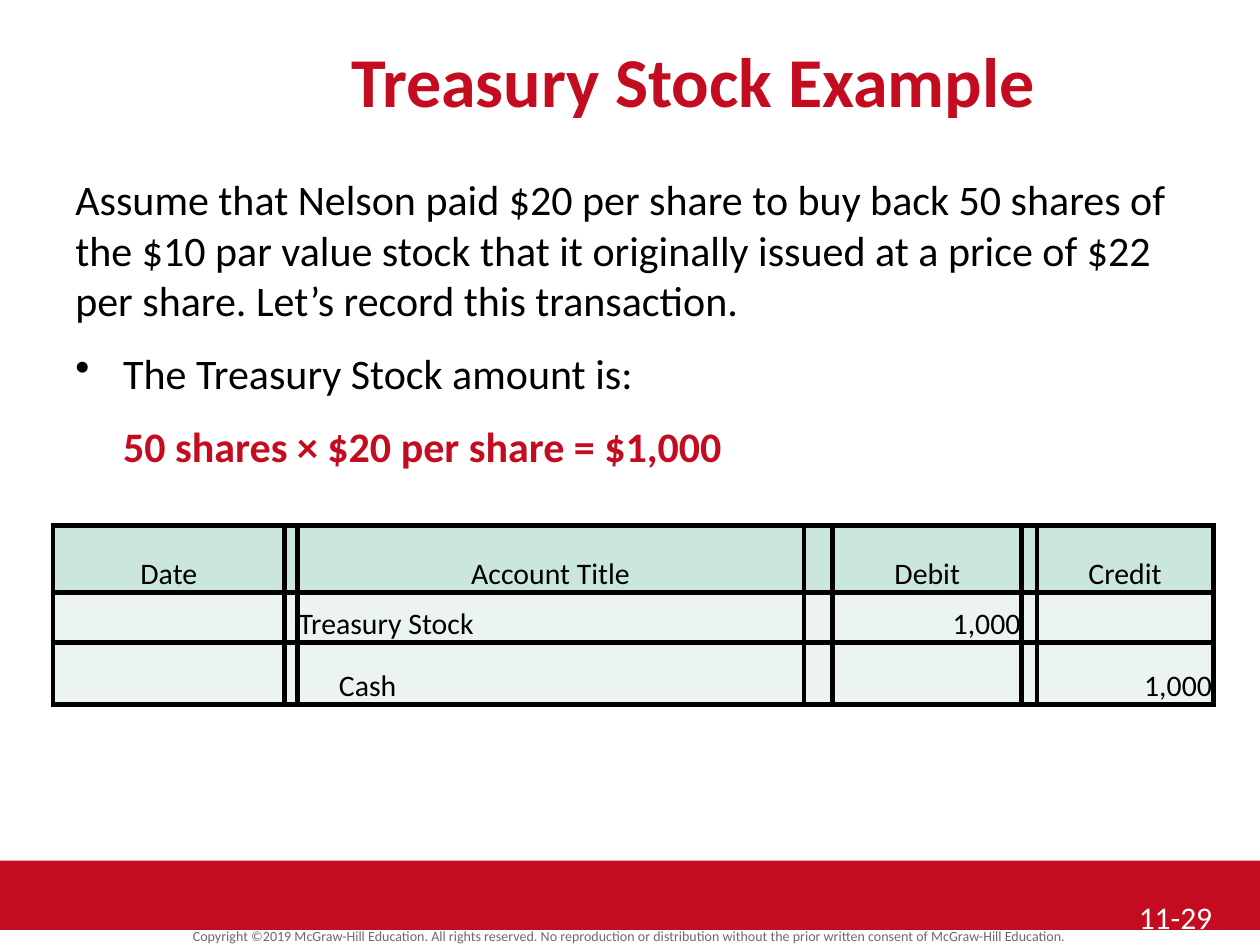
from lxml import etree
from pptx import Presentation
from pptx import util as u
from pptx.dml.color import RGBColor
from pptx.enum import shapes, text
from pptx.oxml.ns import qn

THEME = {
    "font": "Calibri",
    "red": "C30C20", "black": "000000", "white": "FFFFFF", "grey": "6A6A6A",
    "header": "CAE6DE", "row": "ECF4F1",
    "title": 40, "body": 24, "number": 18, "table": 17, "small": 8,
}
LEFT, CENTER, RIGHT = text.PP_ALIGN.LEFT, text.PP_ALIGN.CENTER, text.PP_ALIGN.RIGHT

# Content
TITLE = "Treasury Stock Example"
BODY = [
    ("Assume that Nelson paid $20 per share to buy back 50 shares of the $10 par value "
     "stock that it originally issued at a price of $22 per share. "
     "Let’s record this transaction.", {}),
    ("The Treasury Stock amount is:", {"indent": 0.38, "bullet": "•", "before": 4.8}),
    ("50 shares × $20 per share = $1,000",
     {"indent": 0.38, "before": 4.8, "color": "red", "bold": True}),
]
COPYRIGHT = ("Copyright ©2019 McGraw-Hill Education. All rights reserved. No reproduction or "
             "distribution without the prior written consent of McGraw-Hill Education.")
PAGE_NUMBER = "11-29"

COLUMN_WIDTHS = [1.84, 0.1, 4.02, 0.23, 1.5, 0.12, 1.4]
ROW_HEIGHTS = [0.53, 0.4, 0.49]
JOURNAL = [  # narrow empty columns separate the four fields
    ["Date", "", "Account Title", "", "Debit", "", "Credit"],
    ["", "", "Treasury Stock", "", "1,000", "", ""],
    ["", "", "Cash", "", "", "", "1,000"],
]
CREDIT_INDENT = 0.32


def write(para, words, size="body", color="black", bold=False, align=LEFT,
          indent=0, bullet=None, before=0, after=0, spacing=None):
    """Put words in a paragraph with the given format."""
    props = para._p.get_or_add_pPr()
    props.set("marL", str(u.Inches(indent)))
    props.set("indent", str(-u.Inches(indent) if bullet else 0))
    if bullet:
        etree.SubElement(props, qn("a:buChar"), char=bullet)
    para.alignment = align
    para.space_before, para.space_after = u.Pt(before), u.Pt(after)
    if spacing:
        para.line_spacing = spacing
    font = para.font
    if words:
        span = para.add_run()
        span.text = words
        font = span.font
    font.name, font.size, font.bold = THEME["font"], u.Pt(THEME[size]), bold
    font.color.rgb = RGBColor.from_string(THEME[color])


def add_text(page, place, paragraphs, **style):
    """Add a wrapped text box holding (words, format) paragraphs."""
    box = page.shapes.add_textbox(*map(u.Inches, place))
    frame = box.text_frame
    frame.word_wrap = True
    for i, (words, extra) in enumerate(paragraphs):
        para = frame.add_paragraph() if i else frame.paragraphs[0]
        write(para, words, **{**style, **extra})


def add_borders(cell, color, points):
    props = cell._tc.get_or_add_tcPr()
    for i, side in enumerate(("a:lnL", "a:lnR", "a:lnT", "a:lnB")):
        line = etree.Element(qn(side), w=str(u.Pt(points)))
        fill = etree.SubElement(line, qn("a:solidFill"))
        etree.SubElement(fill, qn("a:srgbClr"), val=color)
        props.insert(i, line)


def add_journal(page, left, top):
    frame = page.shapes.add_table(
        len(ROW_HEIGHTS), len(COLUMN_WIDTHS), u.Inches(left), u.Inches(top),
        u.Inches(sum(COLUMN_WIDTHS)), u.Inches(sum(ROW_HEIGHTS)))
    table = frame.table
    table.first_row = table.horz_banding = False
    for column, width in zip(table.columns, COLUMN_WIDTHS):
        column.width = u.Inches(width)
    for r, (height, entries) in enumerate(zip(ROW_HEIGHTS, JOURNAL)):
        table.rows[r].height = u.Inches(height)
        for c, words in enumerate(entries):
            cell = table.cell(r, c)
            cell.margin_left = cell.margin_right = cell.margin_top = u.Inches(0.01)
            cell.margin_bottom = 0
            cell.vertical_anchor = text.MSO_ANCHOR.BOTTOM
            cell.fill.solid()
            cell.fill.fore_color.rgb = RGBColor.from_string(THEME["row" if r else "header"])
            add_borders(cell, THEME["black"], 3)
            align = CENTER if r == 0 else RIGHT if c > 2 else LEFT
            write(cell.text_frame.paragraphs[0], words, size="table", align=align,
                  indent=CREDIT_INDENT if words == "Cash" else 0)


def main():
    deck = Presentation()
    deck.slide_width, deck.slide_height = u.Inches(10), u.Inches(7.5)
    page = deck.slides.add_slide(deck.slide_layouts[6])

    # Footer band and copyright line
    band = page.shapes.add_shape(shapes.MSO_SHAPE.RECTANGLE,
                                 *map(u.Inches, (0, 6.83, 10, 0.55)))
    band.shadow.inherit = False
    band.fill.solid()
    band.fill.fore_color.rgb = RGBColor.from_string(THEME["red"])
    band.line.fill.background()
    add_text(page, (0, 7.34, 10, 0.19), [(COPYRIGHT, {})],
             size="small", color="grey", align=CENTER, spacing=0.8)

    # Title, explanation and page number
    add_text(page, (1, 0.25, 9, 0.67), [(TITLE, {})],
             size="title", color="red", bold=True, align=CENTER)
    add_text(page, (0.5, 1.33, 9, 5.17), BODY, after=8)
    add_text(page, (8.83, 7.08, 1.17, 0.42), [(PAGE_NUMBER, {})],
             size="number", color="white", indent=0.11)

    # Journal entry
    add_journal(page, 0.42, 4.17)
    deck.save("out.pptx")


if __name__ == "__main__":
    main()
